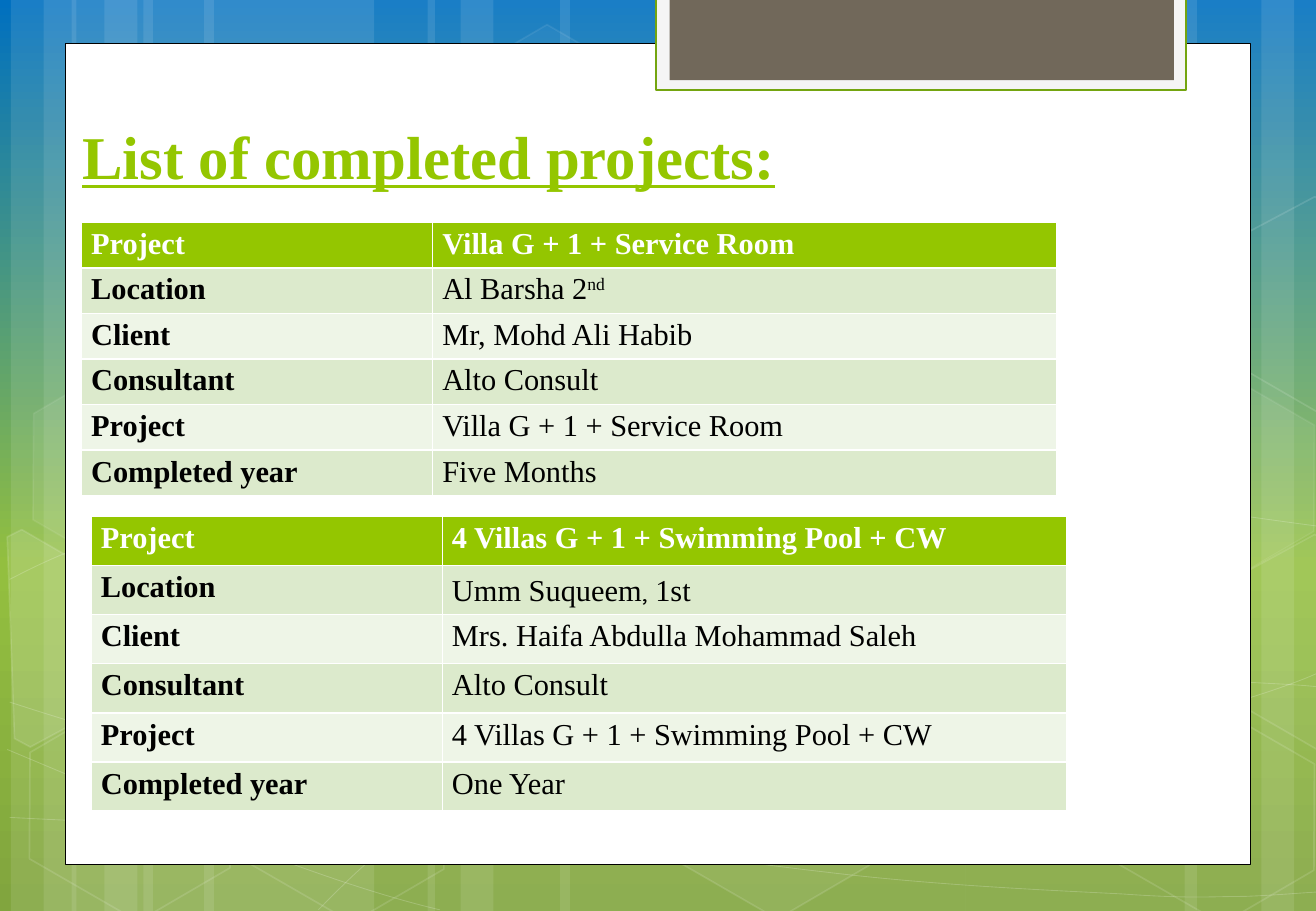
"""Build a slide that lists two completed building projects in tables."""
from lxml.etree import SubElement
from pptx import Presentation
from pptx.dml.color import RGBColor
from pptx.enum.shapes import MSO_SHAPE
from pptx.enum.text import MSO_ANCHOR
from pptx.oxml.ns import qn
from pptx.util import Pt

PX = 9144
WHITE, GREEN = "FFFFFF", "94C600"
FONT = "Times New Roman"

deck = Presentation()
deck.slide_width, deck.slide_height = 1083 * PX, 750 * PX
slide = deck.slides.add_slide(deck.slide_layouts[6])
shapes = slide.shapes


def paint(shape, fill=None, line=None, width=1, veil=100, fade=100):
    """Set fill and line, with opacities in percent."""
    shape.shadow.inherit = False
    shape.line.width = Pt(width)
    for part, tint, alpha in ((shape.fill, fill, veil), (shape.line.fill, line, fade)):
        if tint is None:
            part.background()
            continue
        part.solid()
        part.fore_color.rgb = RGBColor.from_string(tint)
        if alpha < 100:
            last = list(shape._element.spPr.iter(qn("a:srgbClr")))[-1]
            SubElement(last, qn("a:alpha"), val=str(alpha * 1000))


def write(para, text, size, tint, bold, font=FONT):
    """Add one run."""
    run = para.add_run()
    run.text = text
    run.font.name, run.font.size, run.font.bold = font, Pt(size), bold
    run.font.color.rgb = RGBColor.from_string(tint)
    return run


back = slide.background.fill
back.gradient()
back.gradient_angle = 270
stops = slide._element.find(".//" + qn("a:gsLst"))
stops.clear()
for place, tint in ((0, "0070C0"), (62, "93BF3F"), (100, "81A53E")):
    stop = SubElement(stops, qn("a:gs"), pos=str(place * 1000))
    SubElement(stop, qn("a:srgbClr"), val=tint)

bands = [(118, 190), (9, 54), (36, 90), (168, 190), (59, 54), (86, 90),
         (795, 190), (1038, 54), (975, 90), (461, 334), (352, 54), (379, 90)]
for left, width in bands:
    band = shapes.add_shape(MSO_SHAPE.RECTANGLE, left * PX, 0, width * PX, 750 * PX)
    paint(band, WHITE, veil=10)

curves = [
    [(8, 673), (66, 676), (125, 679), (206, 678), (288, 677), (387, 675), (496, 665),
     (605, 655), (758, 636), (858, 617), (957, 598), (1058, 568), (1091, 551)],
    [(8, 477), (39, 461), (70, 446), (132, 431), (193, 416), (280, 394), (376, 387),
     (473, 380), (589, 379), (708, 387), (828, 395), (1026, 426), (1091, 434)],
    [(6, 617), (137, 672), (268, 727), (362, 749)],
    [(8, 578), (42, 589), (76, 600), (139, 616), (202, 631), (296, 656), (386, 673),
     (477, 690), (591, 708), (680, 718), (770, 729), (866, 733), (924, 736),
     (981, 740), (996, 738), (1024, 738), (1051, 737), (1071, 735), (1091, 734)],
    [(262, 749), (282, 729), (301, 709), (327, 691), (353, 673), (390, 653), (420, 639),
     (450, 625), (469, 619), (509, 609), (549, 599), (621, 585), (659, 578),
     (697, 571), (703, 571), (737, 569), (770, 566), (823, 563), (860, 562),
     (898, 561), (960, 562), (960, 562), (984, 562), (1008, 562), (1032, 562),
     (1052, 563), (1070, 564), (1080, 565), (1089, 566), (1086, 565), (1090, 566)],
]
for knots in curves:
    pen = shapes.build_freeform(*knots[0], scale=PX)
    pen.add_line_segments(knots[1:], close=False)
    wave = pen.convert_to_shape()
    route = wave._element.find(".//" + qn("a:path"))
    legs = route.findall(qn("a:lnTo"))
    for i in range(0, len(legs), 3):
        bend = SubElement(route, qn("a:cubicBezTo"))
        for leg in legs[i:i + 3]:
            bend.append(leg[0])
            route.remove(leg)
    paint(wave, line=WHITE, width=0.5, fade=20)

cells = [(362, 36, 4, 8), (538, 589, 6, 12), (12, 591, 0, 12), (15, 312, 7, 8),
         (188, 592, 0, 12), (816, 453, 10, 12), (904, 593, 0, 12), (904, 314, 7, 8)]
for left, top, veil, fade in cells:
    hexa = shapes.add_shape(MSO_SHAPE.HEXAGON, left * PX, top * PX, 190 * PX, 152 * PX)
    hexa.adjustments[0], hexa.adjustments[1] = 0.285, 1.155
    hexa.rotation = 30
    paint(hexa, WHITE if veil else None, WHITE, veil=veil, fade=fade)

shards = [
    (10, [(6, 442), (18, 436), (101, 484), (103, 573), (25, 615), (12, 608)]),
    (4, [(1003, 483), (1082, 440), (1090, 445), (1096, 616), (1089, 620), (1006, 572)]),
    (0, [(1003, 204), (1082, 162), (1091, 167), (1096, 338), (1089, 342), (1006, 294)]),
]
for veil, edge in shards:
    pen = shapes.build_freeform(*edge[0], scale=PX)
    pen.add_line_segments(edge[1:])
    paint(pen.convert_to_shape(), WHITE if veil else None, WHITE, veil=veil, fade=12)

panels = [(54, 36, 975, 676, WHITE, "000000", 0.5),
          (540, -2, 436, 76, "F5F5F5", "74A510", 1.25),
          (551, -2, 415, 68, "71685A", None, 1)]
for left, top, width, height, fill, line, weight in panels:
    panel = shapes.add_shape(MSO_SHAPE.RECTANGLE, left * PX, top * PX, width * PX, height * PX)
    paint(panel, fill, line, weight)

title = shapes.add_textbox(58 * PX, 83 * PX, 832 * PX, 80 * PX).text_frame
title.word_wrap = True
title.vertical_anchor = MSO_ANCHOR.BOTTOM
write(title.paragraphs[0], "List of completed projects:", 36, GREEN, True).font.underline = True

labels = ["Project", "Location", "Client", "Consultant", "Project", "Completed year"]
villa, villas = "Villa G + 1 + Service Room", "4 Villas G + 1 + Swimming Pool + CW"
tables = [
    (67, 183, 225, [[villa], ["Al Barsha 2", "nd"], ["Mr, Mohd Ali Habib"],
                    ["Alto Consult"], [villa], ["Five Months"]]),
    (75, 425, 243, [[villas], ["Umm Suqueem", ",", " 1st"], ["Mrs. Haifa Abdulla Mohammad Saleh"],
                    ["Alto Consult"], [villas], ["One Year"]]),
]
for left, top, height, values in tables:
    grid = shapes.add_table(6, 2, left * PX, top * PX, 803 * PX, height * PX).table
    grid.columns[0].width, grid.columns[1].width = 289 * PX, 514 * PX
    for r, (label, value) in enumerate(zip(labels, values)):
        for c, parts in enumerate(([label], value)):
            cell = grid.cell(r, c)
            cell.margin_left = cell.margin_right = 8 * PX
            cell.margin_top = cell.margin_bottom = 0
            cell.fill.solid()
            tint = GREEN if r == 0 else "DCEACC" if r % 2 else "EEF5E7"
            cell.fill.fore_color.rgb = RGBColor.from_string(tint)
            para = cell.text_frame.paragraphs[0]
            para.line_spacing = 1.15
            for part in parts:
                run = write(para, part, 18, "000000" if r else WHITE, r == 0 or c == 0,
                            "Quicksand" if part == "," else FONT)
                if part == "nd":
                    run.font._element.set("baseline", "30000")

deck.save("out.pptx")
